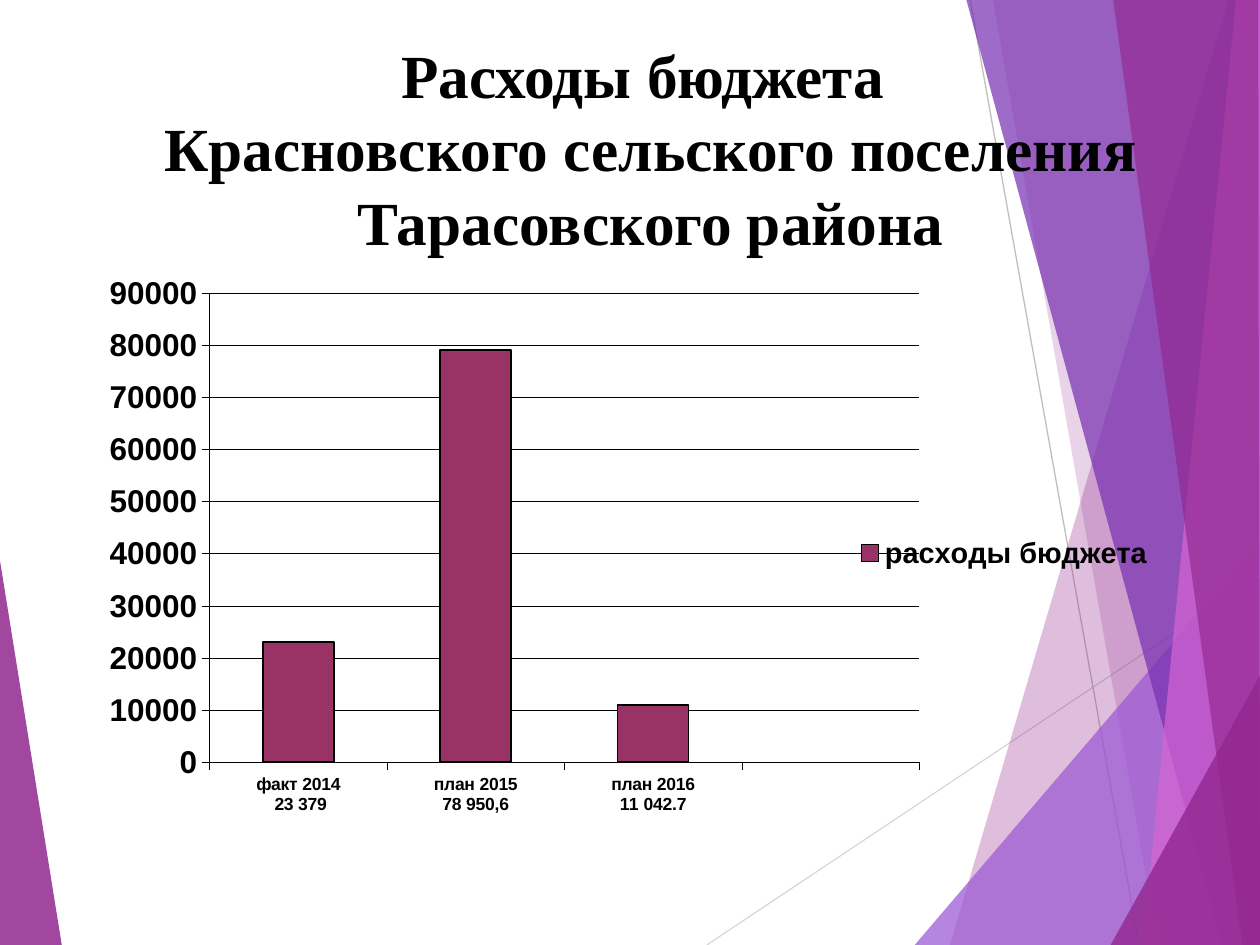
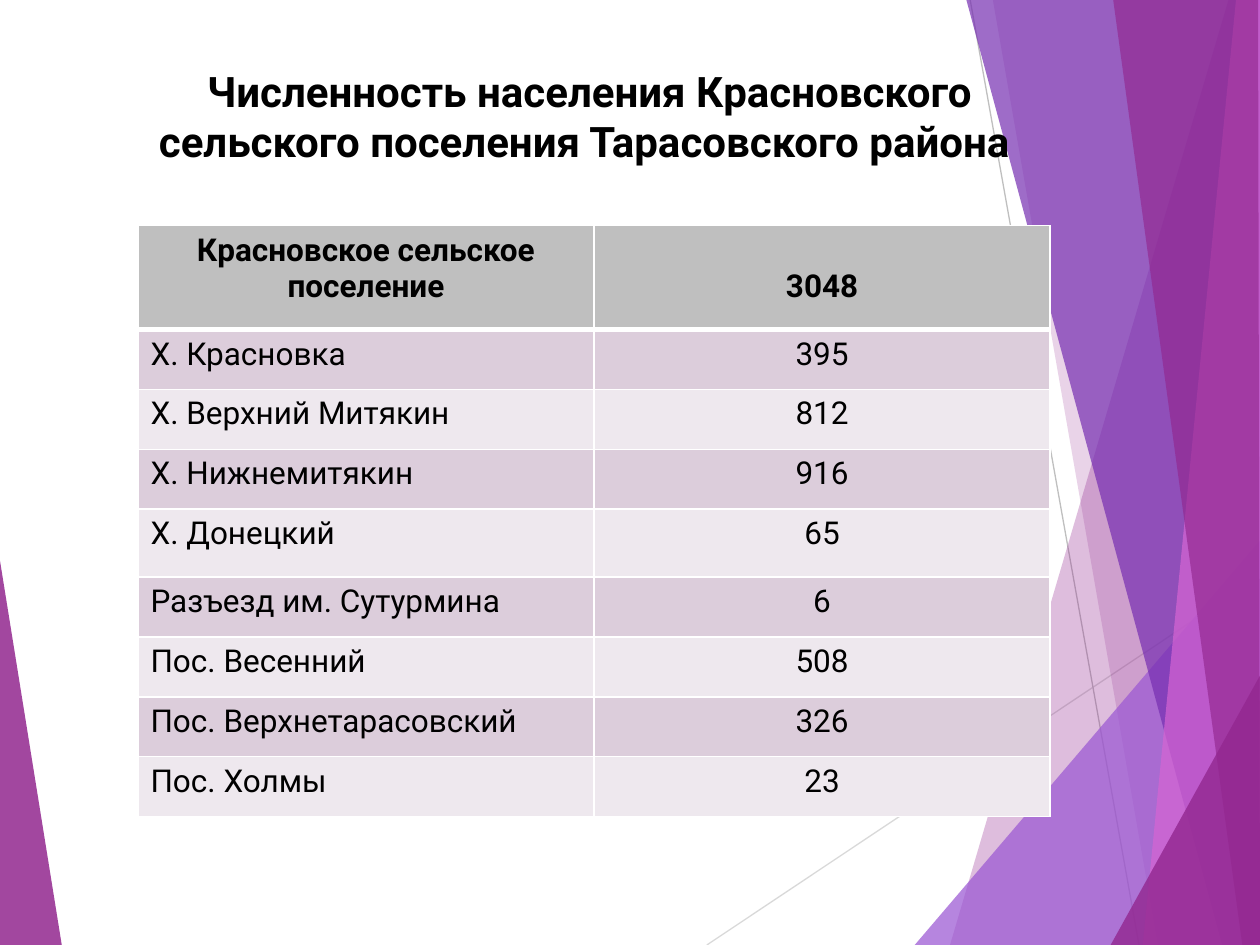
from lxml import etree
from pptx import Presentation
from pptx.chart.data import CategoryChartData
from pptx.dml.color import RGBColor
from pptx.enum.chart import (XL_CHART_TYPE, XL_LEGEND_POSITION, XL_TICK_LABEL_POSITION,
                             XL_TICK_MARK)
from pptx.enum.shapes import MSO_CONNECTOR
from pptx.enum.text import MSO_ANCHOR, MSO_AUTO_SIZE, PP_ALIGN
from pptx.oxml import parse_xml
from pptx.oxml.ns import nsdecls, qn
from pptx.util import Inches, Pt

CENTER, LEFT = PP_ALIGN.CENTER, PP_ALIGN.LEFT
TOP, MIDDLE = MSO_ANCHOR.TOP, MSO_ANCHOR.MIDDLE
COLUMN = XL_CHART_TYPE.COLUMN_CLUSTERED
RIGHT = XL_LEGEND_POSITION.RIGHT
LOW = XL_TICK_LABEL_POSITION.LOW
OUT, NONE = XL_TICK_MARK.OUTSIDE, XL_TICK_MARK.NONE
STRAIGHT = MSO_CONNECTOR.STRAIGHT

BLACK = RGBColor(0x00, 0x00, 0x00)
WHITE = RGBColor(0xFF, 0xFF, 0xFF)
GREY = RGBColor(0xBF, 0xBF, 0xBF)
PALE = RGBColor(0xD9, 0xD9, 0xD9)
PLUM = RGBColor(0x92, 0x27, 0x8F)
LILAC = RGBColor(0x9B, 0x57, 0xD3)
VIOLET = RGBColor(0x76, 0x2E, 0xB1)
PINK = RGBColor(0xD6, 0x65, 0xD3)
WINE = RGBColor(0x99, 0x33, 0x66)
BANDS = (RGBColor(0xDC, 0xCD, 0xDB), RGBColor(0xEE, 0xE8, 0xEE))

SERIF, SANS, ARIAL = "Times New Roman", "Roboto", "Arial"

# The slide is a grid of 100 columns by 100 rows.
WIDTH, HEIGHT = Inches(10), Inches(7.5)
COL, ROW = WIDTH / 100, HEIGHT / 100

EDGE = [((56.1, 100), (100, 60.93), PALE), ((77, 0), (90.4, 100), GREY)]
BLADE = (PLUM, 85, [(0, 59.35), (4.9, 100), (0, 100)])
FACETS = [
    (PLUM, 30, [(97.5, 0), (75.4, 100), (100, 100), (100, 0)]),
    (PLUM, 20, [(78.8, 0), (91.9, 100), (100, 100), (100, 0)]),
    (LILAC, 72, [(72.6, 100), (100, 57.2), (100, 100)]),
    (VIOLET, 70, [(76.7, 0), (97, 100), (100, 100), (100, 0)]),
    (PINK, 70, [(98.1, 0), (90.7, 100), (100, 100), (100, 0)]),
    (PLUM, 65, [(88.35, 0), (98.6, 100), (100, 100), (99.85, 0)]),
    (PLUM, 80, [(88.15, 100), (100, 71.5), (100, 100)]),
]

SPENDING = [("факт 2014\n 23 379", 23000), ("план 2015\n78 950,6", 79000),
            ("план 2016\n11 042.7", 11000), ("", None)]
PEOPLE = [
    ("Красновское сельское поселение", "3048"),
    ("Х. Красновка", "395"),
    ("Х. Верхний Митякин", "812"),
    ("Х. Нижнемитякин", "916"),
    ("Х. Донецкий", "65"),
    ("Разъезд им. Сутурмина", "6"),
    ("Пос. Весенний", "508"),
    ("Пос. Верхнетарасовский", "326"),
    ("Пос. Холмы", "23"),
]


def spot(x, y):
    return round(x * COL), round(y * ROW)


def area(box):
    return (*spot(*box[:2]), *spot(*box[2:]))


def style(font, name, size, bold):
    font.name, font.size, font.bold = name, Pt(size), bold
    font.color.rgb = BLACK


def write(par, text, name, size, bold, align):
    par.alignment = align
    run = par.add_run()
    run.text = text
    style(run.font, name, size, bold)


def facet(slide, color, alpha, points):
    start, *rest = [spot(*p) for p in points]
    pen = slide.shapes.build_freeform(*start, scale=1.0)
    pen.add_line_segments(rest, close=True)
    shape = pen.convert_to_shape()
    shape.shadow.inherit = False
    shape.line.fill.background()
    shape.fill.solid()
    shape.fill.fore_color.rgb = color
    tint = shape._element.spPr.find(qn("a:solidFill"))[0]
    etree.SubElement(tint, qn("a:alpha")).set("val", str(alpha * 1000))
    return shape


def ray(slide, start, end, color):
    line = slide.shapes.add_connector(STRAIGHT, *spot(*start), *spot(*end))
    line.line.color.rgb = color
    line.line.width = Pt(0.75)
    etree.SubElement(line._element.spPr, qn("a:effectLst"))
    return line


def decor(slide):
    """Draw the crystal backdrop and hand it over to the layout, so all slides share it."""
    parts = [facet(slide, *BLADE)]
    parts += [ray(slide, *e) for e in EDGE]
    parts += [facet(slide, *f) for f in FACETS]
    tree = slide.slide_layout.shapes._spTree
    for n, part in enumerate(parts):
        item = part._element
        item.xpath(".//p:cNvPr")[0].set("id", str(100 + n))
        tree.insert(2 + n, item)


def title(slide, box, lines, name, size, anchor, pitch=None):
    head = slide.shapes.title
    head.left, head.top, head.width, head.height = area(box)
    frame = head.text_frame
    frame.word_wrap = True
    frame.auto_size = MSO_AUTO_SIZE.NONE
    frame.vertical_anchor = anchor
    for n, text in enumerate(lines):
        par = frame.add_paragraph() if n else frame.paragraphs[0]
        par.space_before = Pt(0)
        if pitch:
            par.line_spacing = Pt(pitch)
        write(par, text, name, size, True, CENTER)


def place(parent, x, y, w, h, inner=False):
    """Set a manual chart layout, in percent of the chart."""
    old = parent.find(qn("c:layout"))
    if old is not None:
        parent.remove(old)
    target = '<c:layoutTarget val="inner"/>' if inner else ""
    sizes = "".join(f'<c:{key} val="{value / 100}"/>'
                    for key, value in zip("xywh", (x, y, w, h)))
    layout = parse_xml(
        f'<c:layout {nsdecls("c")}><c:manualLayout>{target}'
        f'<c:xMode val="edge"/><c:yMode val="edge"/>{sizes}'
        '</c:manualLayout></c:layout>')
    if inner:
        parent.insert(0, layout)
    else:
        parent.find(qn("c:legendPos")).addnext(layout)


def axis(item, size):
    item.major_tick_mark, item.minor_tick_mark = OUT, NONE
    style(item.tick_labels.font, ARIAL, size, True)
    thin(item.format.line)


def thin(line, width=0.25):
    line.color.rgb = BLACK
    line.width = Pt(width)


def bars(slide, box):
    data = CategoryChartData()
    data.categories = [name for name, _ in SPENDING]
    data.add_series("расходы бюджета", [value for _, value in SPENDING])
    chart = slide.shapes.add_chart(COLUMN, *area(box), data).chart
    chart.has_title = False
    style(chart.font, ARIAL, 18, True)
    clear = parse_xml(f'<c:spPr {nsdecls("c", "a")}><a:noFill/>'
                      '<a:ln><a:noFill/></a:ln></c:spPr>')
    chart._chartSpace.find(qn("c:txPr")).addprevious(clear)

    plot = chart.plots[0]
    plot.gap_width = 150
    plot.vary_by_categories = False
    series = plot.series[0]
    series.format.fill.solid()
    series.format.fill.fore_color.rgb = WINE
    thin(series.format.line, 1)

    axis(chart.category_axis, 10)
    chart.category_axis.tick_label_position = LOW
    scale = chart.value_axis
    axis(scale, 18)
    scale.minimum_scale, scale.maximum_scale, scale.major_unit = 0, 90000, 10000
    scale.has_major_gridlines = True
    thin(scale.major_gridlines.format.line)

    chart.has_legend = True
    legend = chart.legend
    legend.position = RIGHT
    legend.include_in_layout = False
    style(legend.font, ARIAL, 16.5, True)
    place(chart._chartSpace.chart.plotArea, 12.1, 3.6, 63.5, 77, inner=True)
    place(legend._element, 69.2, 42.3, 28, 8)


def border(cell, foot):
    """Draw white cell borders; foot is the width of the lower one in points."""
    tail = cell._tc.get_or_add_tcPr()
    for side, width in (("L", 1), ("R", 1), ("T", 1), ("B", foot)):
        tail.append(parse_xml(
            f'<a:ln{side} {nsdecls("a")} w="{Pt(width)}"><a:solidFill>'
            f'<a:srgbClr val="{WHITE}"/></a:solidFill></a:ln{side}>'))


def census(slide, box):
    grid = slide.shapes.add_table(len(PEOPLE), 2, *area(box)).table
    for r, record in enumerate(PEOPLE):
        top = r == 0
        grid.rows[r].height = Pt({0: 59.5, 4: 38.9}.get(r, 34.2))
        for c, text in enumerate(record):
            cell = grid.cell(r, c)
            border(cell, 3 if top else 1)
            cell.fill.solid()
            cell.fill.fore_color.rgb = GREY if top else BANDS[(r - 1) % 2]
            cell.vertical_anchor = TOP
            if top and c:
                cell.margin_top = Inches(0.34)
            align = CENTER if top or c else LEFT
            write(cell.text_frame.paragraphs[0], text, SANS, 18, top, align)


def budget(slide):
    title(slide, (6.65, 3.25, 90, 16.67),
          ["Расходы бюджета ", "Красновского сельского поселения Тарасовского района"],
          SERIF, 35, TOP, 42)
    bars(slide, (5.9, 28.67, 88.7, 64.53))


def people(slide):
    title(slide, (8.6, 6.2, 76.4, 12.13),
          ["Численность населения Красновского сельского поселения Тарасовского района "],
          SANS, 24, MIDDLE)
    census(slide, (10.95, 23.87, 72.4, 62.53))


def main():
    deck = Presentation()
    deck.slide_width, deck.slide_height = WIDTH, HEIGHT
    layout = deck.slide_layouts[5]
    first, second = [deck.slides.add_slide(layout) for _ in range(2)]
    decor(first)
    budget(first)
    people(second)
    deck.save("out.pptx")


if __name__ == "__main__":
    main()
